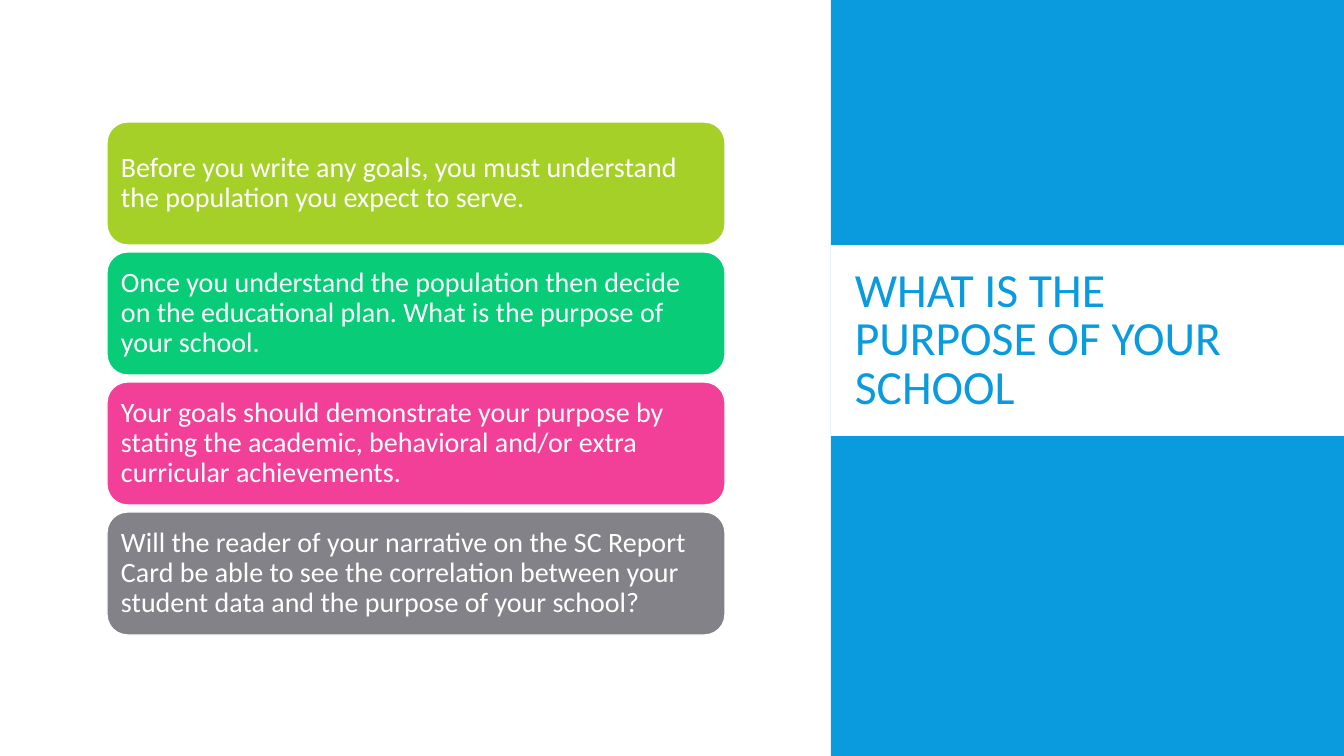
"""Build a slide with four stacked goal cards beside a blue title panel."""
from dataclasses import dataclass

import pptx
import pptx.dml.color
import pptx.enum.shapes
import pptx.enum.text
import pptx.util

SCALE = 914400 / 100.8
WHITE = "FFFFFF"
BLUE = "099BDD"
FONT = "Calibri"
KIND = pptx.enum.shapes.MSO_SHAPE


@dataclass
class Box:
    left: int
    top: int
    width: int
    height: int


@dataclass
class Card:
    text: str
    fill: str


CARDS = [
    Card("Before you write any goals, you must understand the population "
         "you expect to serve.", "A5D028"),
    Card("Once you understand the population then decide on the educational "
         "plan. What is the purpose of your school.", "08CC78"),
    Card("Your goals should demonstrate your purpose by stating the academic, "
         "behavioral and/or extra curricular achievements.", "F24099"),
    Card("Will the reader of your narrative on the SC Report Card be able to "
         "see the correlation between your student data and the purpose of "
         "your school?", "828288"),
]
FIRST = Box(107, 122, 618, 123)
PITCH = 130
PANELS = [(Box(831, 0, 513, 756), BLUE), (Box(831, 245, 513, 191), WHITE)]
TITLE = Box(845, 258, 456, 166)


def px(size: int) -> int:
    return round(size * SCALE)


def place(box: Box) -> tuple[int, int, int, int]:
    return px(box.left), px(box.top), px(box.width), px(box.height)


def color(code: str) -> pptx.dml.color.RGBColor:
    return pptx.dml.color.RGBColor.from_string(code)


def block(slide, kind, box: Box, fill: str):
    shape = slide.shapes.add_shape(kind, *place(box))
    shape.shadow.inherit = False
    shape.fill.solid()
    shape.fill.fore_color.rgb = color(fill)
    shape.line.fill.background()
    return shape


def write(shape, text: str, size: int, tint: str, ratio: float) -> None:
    frame = shape.text_frame
    frame.word_wrap = True
    frame.vertical_anchor = pptx.enum.text.MSO_ANCHOR.MIDDLE
    para = frame.paragraphs[0]
    para.alignment = pptx.enum.text.PP_ALIGN.LEFT
    para.line_spacing = ratio
    run = para.add_run()
    run.text = text
    run.font.name = FONT
    run.font.size = pptx.util.Pt(size)
    run.font.color.rgb = color(tint)


def draw(slide, card: Card, box: Box) -> None:
    shape = block(slide, KIND.ROUNDED_RECTANGLE, box, card.fill)
    shape.line.color.rgb = color(WHITE)
    shape.line.width = pptx.util.Pt(1)
    frame = shape.text_frame
    frame.margin_left = frame.margin_right = px(8)
    frame.margin_top = frame.margin_bottom = px(8)
    write(shape, card.text, 20, WHITE, 0.9)


def main() -> None:
    deck = pptx.Presentation()
    deck.slide_width, deck.slide_height = px(1344), px(756)
    slide = deck.slides.add_slide(deck.slide_layouts[6])
    for box, fill in PANELS:
        block(slide, KIND.RECTANGLE, box, fill)
    title = slide.shapes.add_textbox(*place(TITLE))
    write(title, "WHAT IS THE PURPOSE OF YOUR SCHOOL", 34, BLUE, 0.85)
    for row, card in enumerate(CARDS):
        top = FIRST.top + row * PITCH
        draw(slide, card, Box(FIRST.left, top, FIRST.width, FIRST.height))
    deck.save("out.pptx")


if __name__ == "__main__":
    main()
